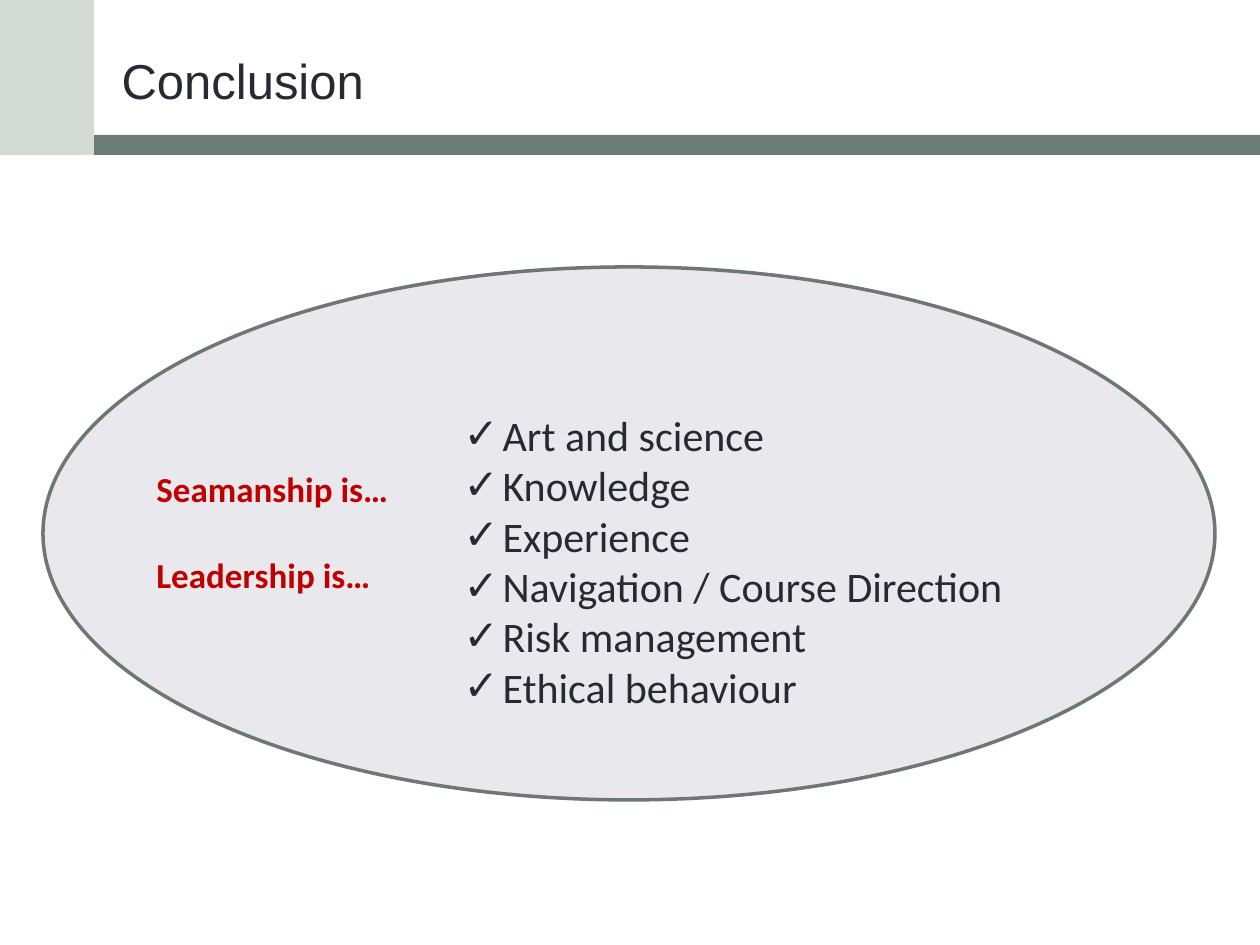
from lxml import etree
from pptx import Presentation
from pptx.dml.color import RGBColor
from pptx.enum.shapes import MSO_SHAPE
from pptx.enum.text import MSO_ANCHOR, MSO_AUTO_SIZE, PP_ALIGN
from pptx.oxml.ns import qn
from pptx.util import Emu, Pt

# Content
TITLE = "Conclusion"
PROMPTS = ["Seamanship is…", "Leadership is…"]
QUALITIES = [
    "Art and science",
    "Knowledge",
    "Experience",
    "Navigation / Course Direction",
    "Risk management",
    "Ethical behaviour",
]

# Colours and text formats
INK = RGBColor(0x29, 0x29, 0x34)
RED = RGBColor(0xC0, 0x00, 0x00)
SAGE = RGBColor(0x6B, 0x7D, 0x72)
PALE_SAGE = RGBColor(0xD4, 0xDA, 0xD6)
LILAC = RGBColor(0xE8, 0xE8, 0xED)
OUTLINE = RGBColor(0x6D, 0x78, 0x71)

TITLE_FONT = {"name": "Arial", "size": Pt(28), "color": INK}
PROMPT_FONT = {"name": "Calibri", "size": Pt(20), "bold": True, "color": RED}
QUALITY_FONT = {"name": "Calibri", "size": Pt(24), "color": INK}

# Layout in px, 126 to the inch
PX = 914400 // 126
SLIDE_W, SLIDE_H = 1260, 945
BLOCK_W, BAND_BOTTOM, BAR_H = 94, 155, 20
PROMPT_X, PROMPT_Y, PROMPT_W, PROMPT_H, PROMPT_STEP = 144, 461, 297, 55, 86
TITLE_INDENT, BULLET_INDENT = 99, 39


def px(value):
    return Emu(round(value * PX))


def place(shape, *box):
    for side, value in zip(("left", "top", "width", "height"), box):
        setattr(shape, side, px(value))


def add_panel(kind, box, fill, outline=None):
    panel = slide.shapes.add_shape(kind, *map(px, box))
    panel.shadow.inherit = False
    panel.fill.solid()
    panel.fill.fore_color.rgb = fill
    if outline:
        panel.line.color.rgb = outline
        panel.line.width = Pt(2)
    else:
        panel.line.fill.background()


def write(shape, lines, font, anchor=MSO_ANCHOR.TOP):
    frame = shape.text_frame
    frame.text = "\n".join(lines)
    frame.word_wrap = True
    frame.auto_size = MSO_AUTO_SIZE.NONE
    frame.vertical_anchor = anchor
    for paragraph in frame.paragraphs:
        paragraph.alignment = PP_ALIGN.LEFT
        paragraph.space_before = Pt(0)
        for run in paragraph.runs:
            for key, value in font.items():
                if key == "color":
                    run.font.color.rgb = value
                else:
                    setattr(run.font, key, value)
    return frame.paragraphs


def indent(paragraph, left, first=0, bullet=None):
    properties = paragraph._p.get_or_add_pPr()
    properties.set("marL", str(px(left)))
    properties.set("indent", str(px(first)))
    if bullet:
        etree.SubElement(properties, qn("a:buFont"), typeface="Arial")
        etree.SubElement(properties, qn("a:buChar"), char=bullet)


prs = Presentation()
prs.slide_width, prs.slide_height = px(SLIDE_W), px(SLIDE_H)
slide = prs.slides.add_slide(prs.slide_layouts[1])
title, qualities = slide.placeholders

# Ellipse and header band
add_panel(MSO_SHAPE.OVAL, (43, 267, 1172, 533), LILAC, OUTLINE)
add_panel(MSO_SHAPE.RECTANGLE,
          (BLOCK_W, BAND_BOTTOM - BAR_H, SLIDE_W - BLOCK_W, BAR_H), SAGE)
add_panel(MSO_SHAPE.RECTANGLE, (0, 0, BLOCK_W, BAND_BOTTOM), PALE_SAGE)

# Title, brought in front of the band
place(title, 10, 13, 1166, 134)
for paragraph in write(title, [TITLE], TITLE_FONT, MSO_ANCHOR.MIDDLE):
    indent(paragraph, TITLE_INDENT)
title.element.getparent().append(title.element)

# Prompts
for row, prompt in enumerate(PROMPTS):
    box = (PROMPT_X, PROMPT_Y + row * PROMPT_STEP, PROMPT_W, PROMPT_H)
    write(slide.shapes.add_textbox(*map(px, box)), [prompt], PROMPT_FONT)

# Checklist, brought in front of the ellipse
place(qualities, 451, 403, 672, 318)
for paragraph in write(qualities, QUALITIES, QUALITY_FONT):
    indent(paragraph, BULLET_INDENT, -BULLET_INDENT, "✓")
qualities.element.getparent().append(qualities.element)

prs.save("out.pptx")
